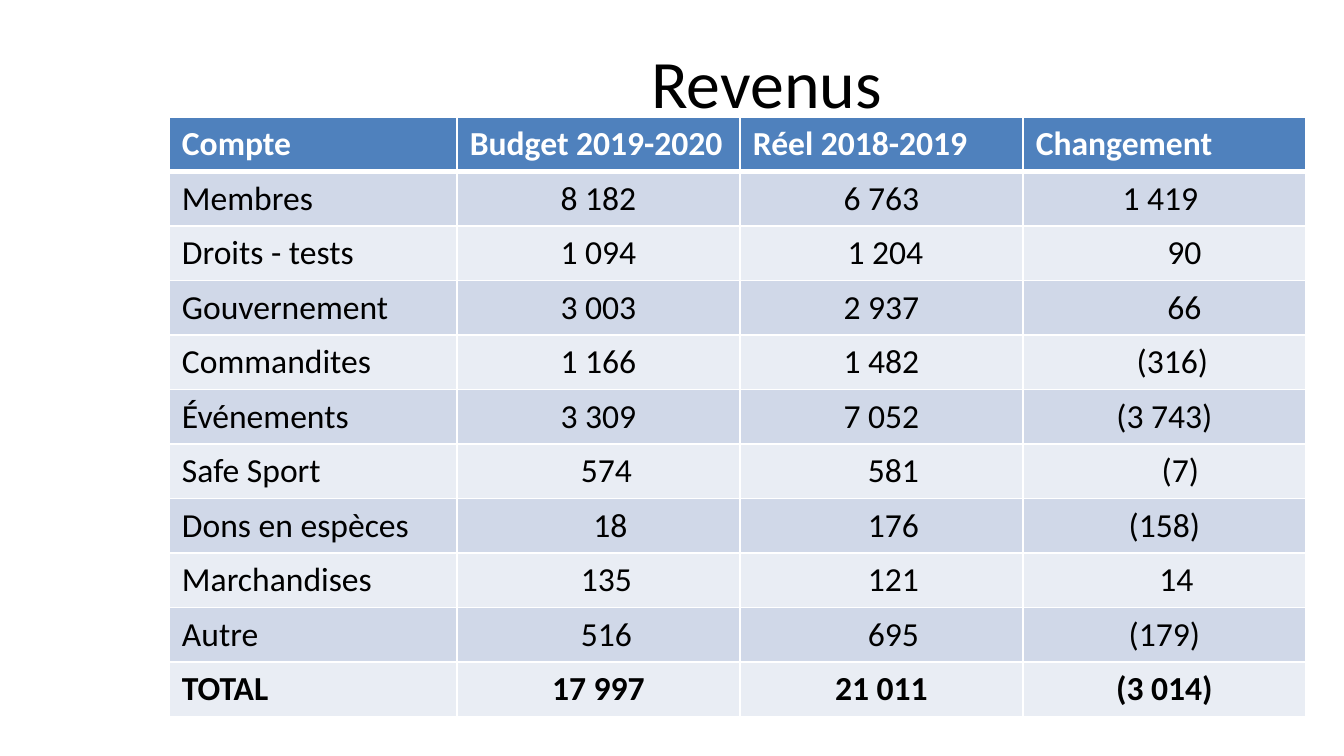
"""Builds a slide with the table of budgeted and actual revenue."""
from lxml import etree
from pptx import Presentation
from pptx.dml.color import RGBColor
from pptx.enum.text import MSO_ANCHOR, MSO_AUTO_SIZE, PP_ALIGN
from pptx.oxml.ns import qn
from pptx.util import Emu, Pt

CENTER, LEFT = PP_ALIGN.CENTER, PP_ALIGN.LEFT
TOP = MSO_ANCHOR.TOP
NO_AUTOFIT = MSO_AUTO_SIZE.NONE

EMU_PER_PX = 914400 / 134.4
SLIDE_WIDTH, SLIDE_HEIGHT = 1344, 756
CELL_MARGIN = 13
NUDGE = 4

WHITE, BLACK = "FFFFFF", "000000"
HEADER_FILL = "4F81BD"
BAND_FILLS = ("D0D8E8", "E9EDF4")

HEADINGS = ("Compte", "Budget 2019-2020", "Réel 2018-2019", "Changement")
COLUMN_WIDTHS = (288, 283, 283, 283)
ROW_HEIGHT = 53

ACCOUNTS_AMOUNTS_NUDGES = (
    ("Membres", ("8 182", "6 763", "1 419"), (0, 0, -1)),
    ("Droits - tests", ("1 094", "1 204", "90"), (0, 1, 5)),
    ("Gouvernement", ("3 003", "2 937", "66"), (0, 0, 5)),
    ("Commandites", ("1 166", "1 482", "(316)"), (0, 0, 2)),
    ("Événements", ("3 309", "7 052", "(3 743)"), (0, 0, 0)),
    ("Safe Sport", ("574", "581", "(7)"), (2, 3, 4)),
    ("Dons en espèces", ("18", "176", "(158)"), (3, 3, 0)),
    ("Marchandises", ("135", "121", "14"), (2, 3, 3)),
    ("Autre", ("516", "695", "(179)"), (2, 3, 0)),
    ("TOTAL", ("17 997", "21 011", "(3 014)"), (0, 0, 0)),
)


def px(length):
    return Emu(round(length * EMU_PER_PX))


def color(hex_code):
    return RGBColor.from_string(hex_code)


class SlideBuilder:
    def __init__(self, presentation, font="Calibri"):
        self.font = font
        self.slide = presentation.slides.add_slide(presentation.slide_layouts[5])

    def add_text(self, frame, text, size, ink=BLACK, bold=False, align=LEFT):
        paragraph = frame.paragraphs[0]
        paragraph.alignment = align
        run = paragraph.add_run()
        run.text = text
        run.font.name = self.font
        run.font.size = Pt(size)
        run.font.bold = bold
        run.font.color.rgb = color(ink)

    def title(self, text, left, top, width, height):
        heading = self.slide.shapes.title
        heading.left, heading.top = px(left), px(top)
        heading.width, heading.height = px(width), px(height)
        frame = heading.text_frame
        frame.auto_size = NO_AUTOFIT
        frame.vertical_anchor = TOP
        frame.margin_top, frame.margin_bottom = px(10), 0
        self.add_text(frame, text, 36.3, align=CENTER)

    def border(self, cell, side, points):
        line = etree.SubElement(cell._tc.get_or_add_tcPr(), qn(f"a:ln{side}"), w=str(Pt(points)))
        fill = etree.SubElement(line, qn("a:solidFill"))
        etree.SubElement(fill, qn("a:srgbClr"), val=WHITE)

    def cell(self, cell, text, fill, top_line=1, bottom_line=1, nudges=0, **style):
        for side, points in (("L", 1), ("R", 1), ("T", top_line), ("B", bottom_line)):
            self.border(cell, side, points)
        cell.fill.solid()
        cell.fill.fore_color.rgb = color(fill)
        cell.margin_left = px(CELL_MARGIN + 2 * NUDGE * max(nudges, 0))
        cell.margin_right = px(CELL_MARGIN + 2 * NUDGE * max(-nudges, 0))
        self.add_text(cell.text_frame, text, 18, **style)

    def table(self, left, top):
        row_count = len(ACCOUNTS_AMOUNTS_NUDGES) + 1
        table = self.slide.shapes.add_table(
            row_count, len(HEADINGS), px(left), px(top),
            px(sum(COLUMN_WIDTHS)), px(row_count * ROW_HEIGHT)).table
        for column, width in zip(table.columns, COLUMN_WIDTHS):
            column.width = px(width)
        for row in table.rows:
            row.height = px(ROW_HEIGHT)
        for col, heading in enumerate(HEADINGS):
            self.cell(table.cell(0, col), heading, HEADER_FILL,
                      bottom_line=3, ink=WHITE, bold=True)
        for row, (account, amounts, shifts) in enumerate(ACCOUNTS_AMOUNTS_NUDGES, 1):
            look = {"fill": BAND_FILLS[(row - 1) % 2], "bold": account == "TOTAL",
                    "top_line": 3 if row == 1 else 1}
            self.cell(table.cell(row, 0), account, **look)
            for col, (amount, nudges) in enumerate(zip(amounts, shifts), 1):
                self.cell(table.cell(row, col), amount, nudges=nudges, align=CENTER, **look)


def main():
    presentation = Presentation()
    presentation.slide_width = px(SLIDE_WIDTH)
    presentation.slide_height = px(SLIDE_HEIGHT)
    builder = SlideBuilder(presentation)
    builder.title("Revenus", 202, 31, 1129, 82)
    builder.table(169, 117)
    presentation.save("out.pptx")


if __name__ == "__main__":
    main()
